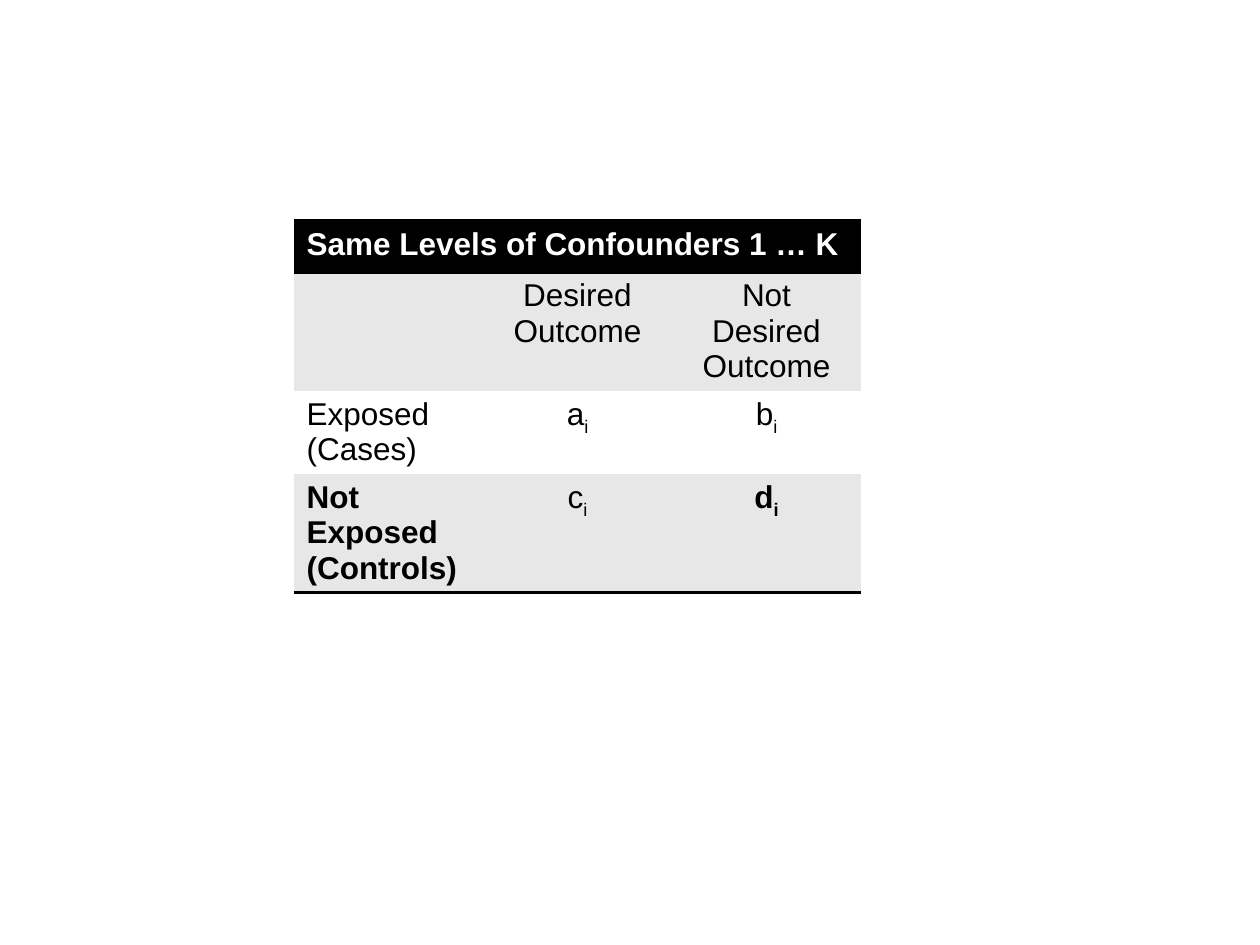
from lxml import etree
from pptx import Presentation
from pptx.dml.color import RGBColor
from pptx.enum.text import PP_ALIGN
from pptx.oxml.ns import qn
from pptx.util import Pt

LEFT, CENTER = PP_ALIGN.LEFT, PP_ALIGN.CENTER
COLORS = {"black": "000000", "white": "FFFFFF", "band": "E7E7E7"}
FONT = "Arial"
NO_STYLE = "{2D5ABB26-0587-4C30-8999-92F81FD0307C}"
TITLE = "Same Levels of Confounders 1 … K"
# Each cell: text, subscript, bold
BODY = [
    [("", "", False), ("Desired Outcome", "", False), ("Not Desired Outcome", "", False)],
    [("Exposed (Cases)", "", False), ("a", "i", False), ("b", "i", False)],
    [("Not Exposed (Controls)", "", True), ("c", "i", False), ("d", "i", True)],
]


def add_border(cell, side):
    line = etree.SubElement(cell._tc.get_or_add_tcPr(), qn(f"a:ln{side}"), w=str(Pt(2)))
    fill = etree.SubElement(line, qn("a:solidFill"))
    etree.SubElement(fill, qn("a:srgbClr"), val=COLORS["black"])


def fill_cell(cell, fill):
    cell.fill.solid()
    cell.fill.fore_color.rgb = RGBColor.from_string(COLORS[fill])


def write_cell(cell, text, subscript, bold, color, align):
    paragraph = cell.text_frame.paragraphs[0]
    paragraph.alignment = align
    paragraph.font.size = Pt(18)
    for part, baseline in ((text, None), (subscript, "-25000")):
        if not part:
            continue
        run = paragraph.add_run()
        run.text = part
        run.font.name = FONT
        run.font.size = Pt(18)
        run.font.bold = bold
        run.font.color.rgb = RGBColor.from_string(COLORS[color])
        if baseline:
            run._r.get_or_add_rPr().set("baseline", baseline)


def add_confounder_table(slide, left, top, width, height):
    frame = slide.shapes.add_table(len(BODY) + 1, 3, left, top, width, height)
    table = frame.table
    table.horz_banding = False
    table._tbl.tblPr.find(qn("a:tableStyleId")).text = NO_STYLE
    for row in table.rows:
        row.height = Pt(29.5)
    frame.height = height

    title_cells = list(table.rows[0].cells)
    title_cells[0].merge(title_cells[-1])
    for cell in title_cells:
        add_border(cell, "T")
        add_border(cell, "B")
        fill_cell(cell, "black")
    write_cell(title_cells[0], TITLE, "", True, "white", LEFT)

    for row, entries in enumerate(BODY, start=1):
        for column, (text, subscript, bold) in enumerate(entries):
            cell = table.cell(row, column)
            if row == len(BODY):
                add_border(cell, "B")
            fill_cell(cell, "band" if row % 2 else "white")
            write_cell(cell, text, subscript, bold, "black", CENTER if column else LEFT)


def main():
    presentation = Presentation()
    presentation.slide_width, presentation.slide_height = Pt(720), Pt(540)
    slide = presentation.slides.add_slide(presentation.slide_layouts[6])
    add_confounder_table(slide, Pt(168), Pt(126), Pt(324), Pt(180.72))
    presentation.save("out.pptx")


if __name__ == "__main__":
    main()
